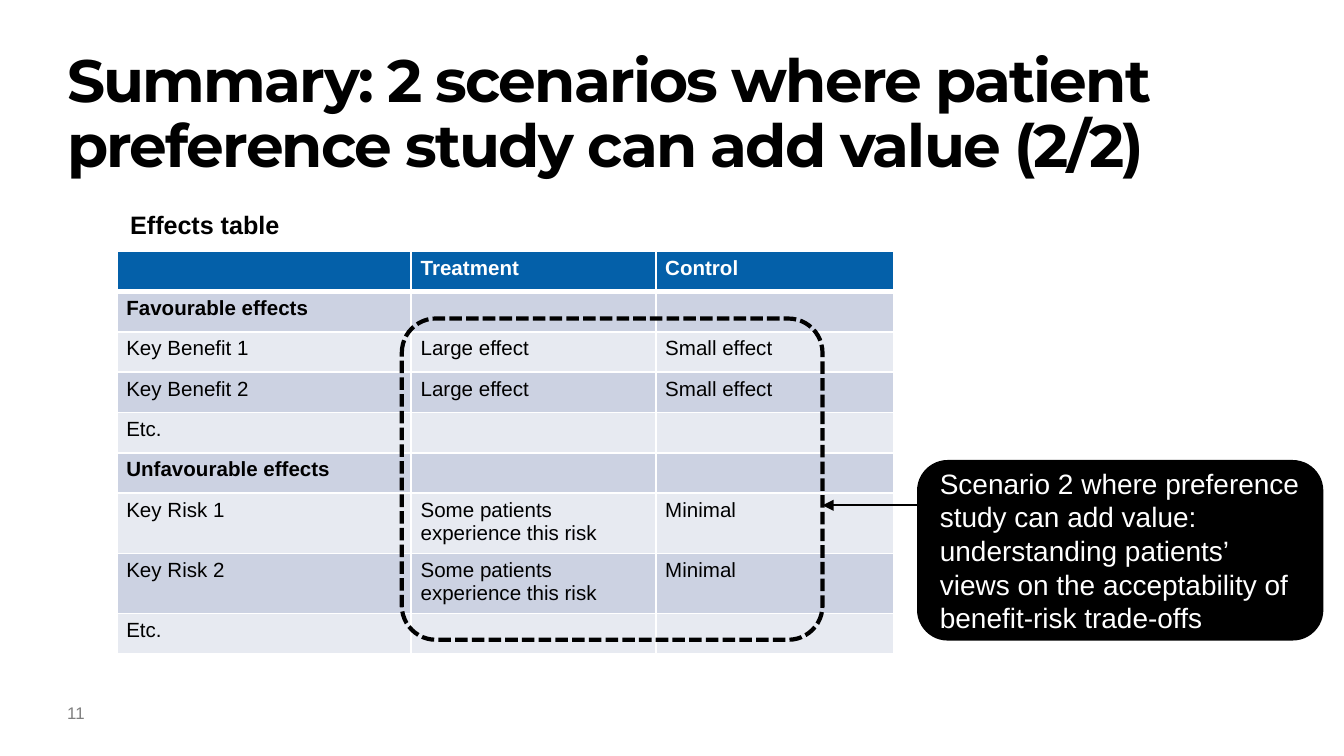
from lxml.etree import SubElement
from pptx import Presentation
from pptx.dml.color import RGBColor
from pptx.enum.dml import MSO_LINE
from pptx.enum.shapes import MSO_CONNECTOR, MSO_SHAPE
from pptx.enum.text import MSO_ANCHOR, MSO_AUTO_SIZE, PP_ALIGN
from pptx.oxml.ns import qn
from pptx.util import Inches, Pt

COLORS = {
    "black": "000000",
    "white": "FFFFFF",
    "grey": "7F7F7F",
    "header": "0460A9",
    "band_dark": "CCD2E2",
    "band_light": "E7EAF1",
}
COLUMN_WIDTHS = [2.19, 1.82, 1.77]
ROW_HEIGHTS = [0.3] * 6 + [0.38] * 2 + [0.3]
EFFECTS = [
    ("", "Treatment", "Control"),
    ("Favourable effects", "", ""),
    ("Key Benefit 1", "Large effect", "Small effect"),
    ("Key Benefit 2", "Large effect", "Small effect"),
    ("Etc.", "", ""),
    ("Unfavourable effects", "", ""),
    ("Key Risk 1", "Some patients experience this risk", "Minimal"),
    ("Key Risk 2", "Some patients experience this risk", "Minimal"),
    ("Etc.", "", ""),
]
BOLD_ROWS = (0, 1, 5)


def rgb(name):
    """Return the named colour."""
    return RGBColor.from_string(COLORS[name])


def style_paragraph(paragraph, size, color, bold=False, font_name="Arial"):
    """Set the font of a whole paragraph."""
    font = paragraph.font
    font.name, font.size, font.bold = font_name, Pt(size), bold
    font.color.rgb = rgb(color)


def set_margins(frame, horizontal, vertical):
    """Set equal opposite margins, in inches."""
    frame.margin_left = frame.margin_right = Inches(horizontal)
    frame.margin_top = frame.margin_bottom = Inches(vertical)


def set_line(line, width):
    """Give a line the black colour and a width in points."""
    line.color.rgb = rgb("black")
    line.width = Pt(width)


def add_title(slide, box):
    """Place and format the title placeholder."""
    title = slide.shapes.title
    title.left, title.top, title.width, title.height = map(Inches, box)
    frame = title.text_frame
    frame.text = "Summary: 2 scenarios where patient preference study can add value (2/2)"
    frame.word_wrap = True
    frame.auto_size = MSO_AUTO_SIZE.NONE
    frame.vertical_anchor = MSO_ANCHOR.TOP
    set_margins(frame, 0, 0)
    paragraph = frame.paragraphs[0]
    paragraph.alignment = PP_ALIGN.LEFT
    paragraph.line_spacing = 0.9
    style_paragraph(paragraph, 32, "black", True, "Montserrat")
    paragraph.runs[0].font._element.set("spc", "-100")


def add_label(slide, box, text, size, color, bold=False, margins=(0.1, 0.05)):
    """Add a one-line text box."""
    frame = slide.shapes.add_textbox(*map(Inches, box)).text_frame
    frame.word_wrap = True
    frame.text = text
    set_margins(frame, *margins)
    style_paragraph(frame.paragraphs[0], size, color, bold)


def add_cell_borders(cell, bottom_width):
    """Draw white borders around a table cell."""
    properties = cell._tc.get_or_add_tcPr()
    widths = {"a:lnL": 1, "a:lnR": 1, "a:lnT": 1, "a:lnB": bottom_width}
    for tag, width in widths.items():
        border = SubElement(properties, qn(tag), w=str(Pt(width)))
        fill = SubElement(border, qn("a:solidFill"))
        SubElement(fill, qn("a:srgbClr"), val=COLORS["white"])


def fill_cell(cell, text, row_index):
    """Write and format one cell of the effects table."""
    is_header = row_index == 0
    band = "band_dark" if row_index % 2 else "band_light"
    add_cell_borders(cell, 3 if is_header else 1)
    cell.fill.solid()
    cell.fill.fore_color.rgb = rgb("header" if is_header else band)
    set_margins(cell, 0.07, 0.04)
    cell.text = text
    paragraph = cell.text_frame.paragraphs[0]
    style_paragraph(paragraph, 11, "white" if is_header else "black", row_index in BOLD_ROWS)
    if not text:
        SubElement(paragraph._p, qn("a:endParaRPr"), sz="1100")


def add_effects_table(slide, left, top):
    """Add the effects table with its top left corner at the given point."""
    box = (left, top, sum(COLUMN_WIDTHS), sum(ROW_HEIGHTS))
    table = slide.shapes.add_table(len(EFFECTS), len(COLUMN_WIDTHS), *map(Inches, box)).table
    for column, width in zip(table.columns, COLUMN_WIDTHS):
        column.width = Inches(width)
    for row_index, texts in enumerate(EFFECTS):
        table.rows[row_index].height = Inches(ROW_HEIGHTS[row_index])
        for column_index, text in enumerate(texts):
            fill_cell(table.cell(row_index, column_index), text, row_index)


def add_callout(slide, box):
    """Add the black box that explains the scenario."""
    callout = slide.shapes.add_shape(MSO_SHAPE.ROUNDED_RECTANGLE, *map(Inches, box))
    callout.shadow.inherit = False
    callout.fill.solid()
    callout.fill.fore_color.rgb = rgb("black")
    set_line(callout.line, 1)
    frame = callout.text_frame
    frame.word_wrap = True
    frame.vertical_anchor = MSO_ANCHOR.MIDDLE
    frame.text = (
        "Scenario 2 where preference study can add value: understanding "
        "patients’ views on the acceptability of benefit-risk trade-offs"
    )
    frame.paragraphs[0].alignment = PP_ALIGN.LEFT
    style_paragraph(frame.paragraphs[0], 15, "white")


def add_highlight(slide, box):
    """Add the dashed outline around the compared effects."""
    outline = slide.shapes.add_shape(MSO_SHAPE.ROUNDED_RECTANGLE, *map(Inches, box))
    outline.adjustments[0] = 0.106
    outline.shadow.inherit = False
    outline.fill.background()
    set_line(outline.line, 2.25)
    outline.line.dash_style = MSO_LINE.SQUARE_DOT


def add_arrow(slide, start, end, y):
    """Add a horizontal arrow from start to end."""
    arrow = slide.shapes.add_connector(
        MSO_CONNECTOR.STRAIGHT, Inches(start), Inches(y), Inches(end), Inches(y)
    )
    set_line(arrow.line, 1)
    SubElement(arrow.line._get_or_add_ln(), qn("a:tailEnd"), type="triangle")
    SubElement(arrow._element.spPr, qn("a:effectLst"))


def main():
    """Build and save the presentation."""
    presentation = Presentation()
    presentation.slide_width = Inches(10)
    presentation.slide_height = presentation.slide_width * 9 // 16
    slide = presentation.slides.add_slide(presentation.slide_layouts[5])
    callout_box = (6.83, 3.43, 3.01, 1.33)
    highlight_box = (2.99, 2.37, 3.13, 2.39)
    add_title(slide, (0.5, 0.38, 9, 1.05))
    add_label(slide, (0.5, 5.23, 0.25, 0.25), "11", 9, "grey", margins=(0, 0))
    add_effects_table(slide, 0.87, 1.87)
    add_callout(slide, callout_box)
    add_highlight(slide, highlight_box)
    add_arrow(slide, callout_box[0], highlight_box[0] + highlight_box[2], 3.76)
    add_label(slide, (0.87, 1.51, 2.95, 0.33), "Effects table", 13.5, "black", True)
    presentation.save("out.pptx")


if __name__ == "__main__":
    main()
